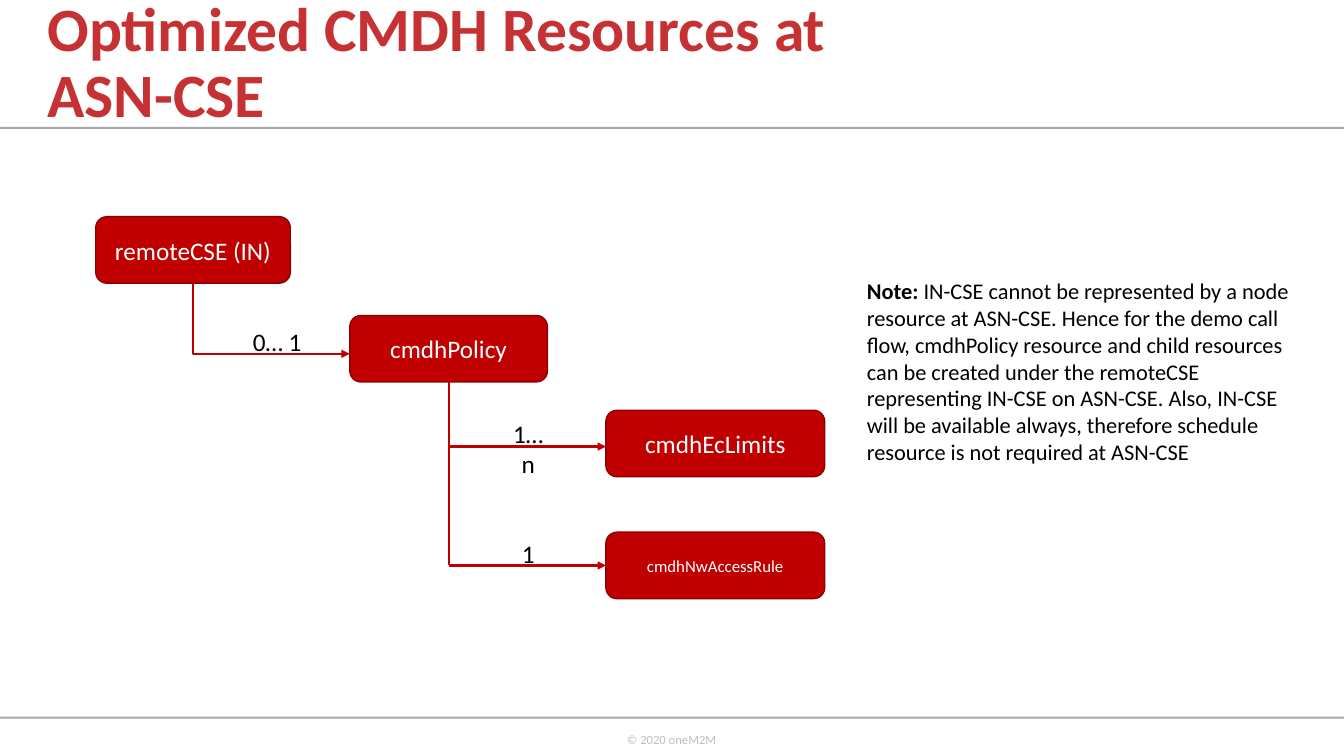
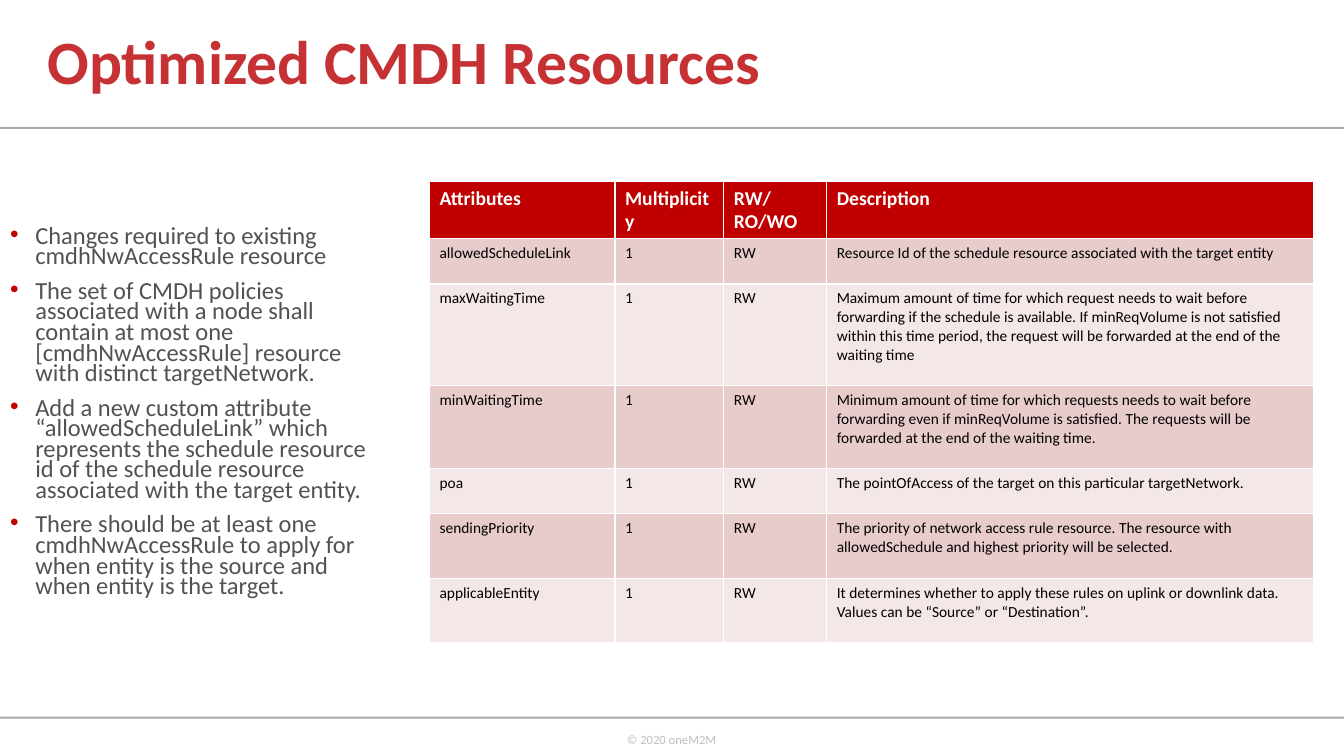
from lxml.etree import SubElement as Sub
from pptx import Presentation
from pptx.dml.color import RGBColor
from pptx.enum.shapes import MSO_CONNECTOR as Link, MSO_SHAPE as Shape
from pptx.enum.text import MSO_ANCHOR as Anchor, MSO_AUTO_SIZE as Fit, PP_ALIGN as Align
from pptx.oxml.ns import qn
from pptx.util import Inches, Pt

RED = RGBColor(0xC0, 0x00, 0x00)
DARK = RGBColor(0x8E, 0x00, 0x00)
TITLE = RGBColor(0xC6, 0x31, 0x33)
RULE = RGBColor(0xA7, 0xA9, 0xAC)
PALE = RGBColor(0xBF, 0xBF, 0xBF)
BODY = RGBColor(0x54, 0x50, 0x54)
WHITE = RGBColor(0xFF, 0xFF, 0xFF)
BLACK = RGBColor(0x00, 0x00, 0x00)
BANDS = [RGBColor(0xE8, 0xCC, 0xCC), RGBColor(0xF4, 0xE7, 0xE7)]


def write(para, text, size, color, bold=False):
    run = para.add_run()
    run.text = text
    font = run.font
    font.name = "Calibri"
    font.size = Pt(size)
    font.bold = bold
    font.color.rgb = color


def start(layout, text):
    slide = deck.slides.add_slide(deck.slide_layouts[layout])
    for top in (1.26, 7.11):
        rule = slide.shapes.add_shape(Shape.RECTANGLE, 0, Inches(top), deck.slide_width, Inches(0.02))
        rule.shadow.inherit = False
        rule.fill.solid()
        rule.fill.fore_color.rgb = RULE
        rule.line.fill.background()
    foot = slide.shapes.add_textbox(Inches(6.12), Inches(7.21), Inches(1.12), Inches(0.4))
    write(foot.text_frame.paragraphs[0], "© 2020 oneM2M", 9, PALE)
    head = slide.shapes.title
    head.left, head.top, head.width, head.height = 0, 0, Inches(8.59), Inches(1.28)
    head.left = Inches(0.37)
    frame = head.text_frame
    frame.auto_size = Fit.NONE
    frame.vertical_anchor = Anchor.MIDDLE
    para = frame.paragraphs[0]
    para.alignment = Align.LEFT
    para.line_spacing = 0.9
    write(para, text, 44, TITLE, True)
    return slide


deck = Presentation()
deck.slide_width = Inches(13.33)
deck.slide_height = Inches(7.5)

slide = start(5, "Optimized CMDH Resources at ASN-CSE")
nodes = {}
for name, left, top, width, size in [
    ("remoteCSE (IN)", 0.95, 2.15, 1.93, 18),
    ("cmdhPolicy", 3.47, 3.13, 1.96, 18),
    ("cmdhEcLimits", 6.01, 4.07, 2.17, 18),
    ("cmdhNwAccessRule", 6.01, 5.28, 2.17, 12),
]:
    node = slide.shapes.add_shape(
        Shape.ROUNDED_RECTANGLE, Inches(left), Inches(top), Inches(width), Inches(0.66))
    node.shadow.inherit = False
    node.fill.solid()
    node.fill.fore_color.rgb = RED
    node.line.color.rgb = DARK
    node.line.width = Pt(1)
    frame = node.text_frame
    frame.vertical_anchor = Anchor.MIDDLE
    para = frame.paragraphs[0]
    para.alignment = Align.CENTER
    write(para, name, size, WHITE)
    nodes[name] = node

for kind, x1, y1, x2, y2, first, last, arrow in [
    (Link.ELBOW, 1.91, 2.82, 3.47, 3.51, "remoteCSE (IN)", None, True),
    (Link.STRAIGHT, 4.45, 3.79, 4.45, 5.61, "cmdhPolicy", None, False),
    (Link.STRAIGHT, 4.45, 4.43, 6.01, 4.43, None, None, True),
    (Link.STRAIGHT, 4.45, 5.61, 6.01, 5.61, None, "cmdhNwAccessRule", True),
]:
    line = slide.shapes.add_connector(kind, Inches(x1), Inches(y1), Inches(x2), Inches(y2))
    line.line.color.rgb = RED
    line.line.width = Pt(1.5)
    if first:
        line.begin_connect(nodes[first], 2)
    if last:
        line.end_connect(nodes[last], 1)
    props = line.element.spPr
    if arrow:
        Sub(props.find(qn("a:ln")), qn("a:tailEnd"), type="triangle")
    Sub(props, qn("a:effectLst"))
    if kind == Link.ELBOW:
        wide, high = x2 - x1, y2 - y1
        line.left, line.top = Inches((x1 + x2 - high) / 2), Inches((y1 + y2 - wide) / 2)
        line.width, line.height = Inches(high), Inches(wide)
        props.find(qn("a:prstGeom")).set("prst", "bentConnector2")
        turn = props.find(qn("a:xfrm"))
        turn.set("rot", "16200000")
        turn.set("flipH", "1")

for text, left, top, width in [
    ("1… n", 4.92, 4.1, 0.64), ("1", 4.92, 5.29, 0.64), ("0… 1", 2.35, 3.19, 0.8),
]:
    label = slide.shapes.add_textbox(Inches(left), Inches(top), Inches(width), Inches(0.4))
    label.text_frame.word_wrap = True
    para = label.text_frame.paragraphs[0]
    para.alignment = Align.CENTER
    write(para, text, 18, BLACK)

note = slide.shapes.add_textbox(Inches(8.5), Inches(2.7), Inches(4.5), Inches(2.52))
note.text_frame.word_wrap = True
para = note.text_frame.paragraphs[0]
write(para, "Note: ", 16, BLACK, True)
write(para, "IN-CSE cannot be represented by a node resource at ASN-CSE. Hence for the demo call flow, "
      "cmdhPolicy resource and child resources can be created under the remoteCSE representing IN-CSE "
      "on ASN-CSE. Also, IN-CSE will be available always, therefore schedule resource is not required "
      "at ASN-CSE", 16, BLACK)

slide = start(1, "Optimized CMDH Resources")
body = slide.placeholders[1]
body.left, body.top, body.width, body.height = 0, Inches(2.21), Inches(3.91), Inches(4.64)
frame = body.text_frame
frame.auto_size = Fit.NONE
for i, text in enumerate([
    "Changes required to existing cmdhNwAccessRule resource",
    "The set of CMDH policies associated with a node shall contain at most one [cmdhNwAccessRule] "
    "resource with distinct targetNetwork.",
    "Add a new custom attribute “allowedScheduleLink” which represents the schedule resource id of "
    "the schedule resource associated with the target entity.",
    "There should be at least one cmdhNwAccessRule to apply for when entity is the source and when "
    "entity is the target.",
]):
    para = frame.add_paragraph() if i else frame.paragraphs[0]
    para.line_spacing = 0.7
    para.space_before = Pt(10 if i else 0)
    props = para._p.get_or_add_pPr()
    props.set("marL", str(Inches(0.25)))
    props.set("indent", str(-Inches(0.25)))
    Sub(Sub(props, qn("a:buClr")), qn("a:srgbClr"), val=str(RED))
    Sub(props, qn("a:buFont"), typeface="Arial")
    Sub(props, qn("a:buChar"), char="•")
    write(para, text, 17.5, BODY)

rows = [
    (0.56, "Attributes", "Multiplicity", "RW/RO/WO", "Description"),
    (0.45, "allowedScheduleLink", "1", "RW",
     "Resource Id of the schedule resource associated with the target entity"),
    (1.01, "maxWaitingTime", "1", "RW",
     "Maximum amount of time for which request needs to wait before forwarding if the schedule is "
     "available. If minReqVolume is not satisfied within this time period, the request will be "
     "forwarded at the end of the waiting time"),
    (0.82, "minWaitingTime", "1", "RW",
     "Minimum amount of time for which requests needs to wait before forwarding even if minReqVolume "
     "is satisfied. The requests will be forwarded at the end of the waiting time."),
    (0.45, "poa", "1", "RW", "The pointOfAccess of the target on this particular targetNetwork."),
    (0.64, "sendingPriority", "1", "RW",
     "The priority of network access rule resource. The resource with allowedSchedule and highest "
     "priority will be selected."),
    (0.64, "applicableEntity", "1", "RW",
     "It determines whether to apply these rules on uplink or downlink data. Values can be “Source” "
     "or “Destination”."),
]
table = slide.shapes.add_table(
    len(rows), 4, Inches(4.26), Inches(1.8), Inches(8.77), Inches(4.57)).table
for col, width in zip(table.columns, (1.84, 1.08, 1.02, 4.83)):
    col.width = Inches(width)
for i, (high, *texts) in enumerate(rows):
    table.rows[i].height = Inches(high)
    for j, text in enumerate(texts):
        cell = table.cell(i, j)
        cell.fill.solid()
        cell.fill.fore_color.rgb = BANDS[(i - 1) % 2] if i else RED
        para = cell.text_frame.paragraphs[0]
        if i:
            write(para, text, 11, BLACK)
        else:
            write(para, text, 14, WHITE, True)

deck.save("out.pptx")
